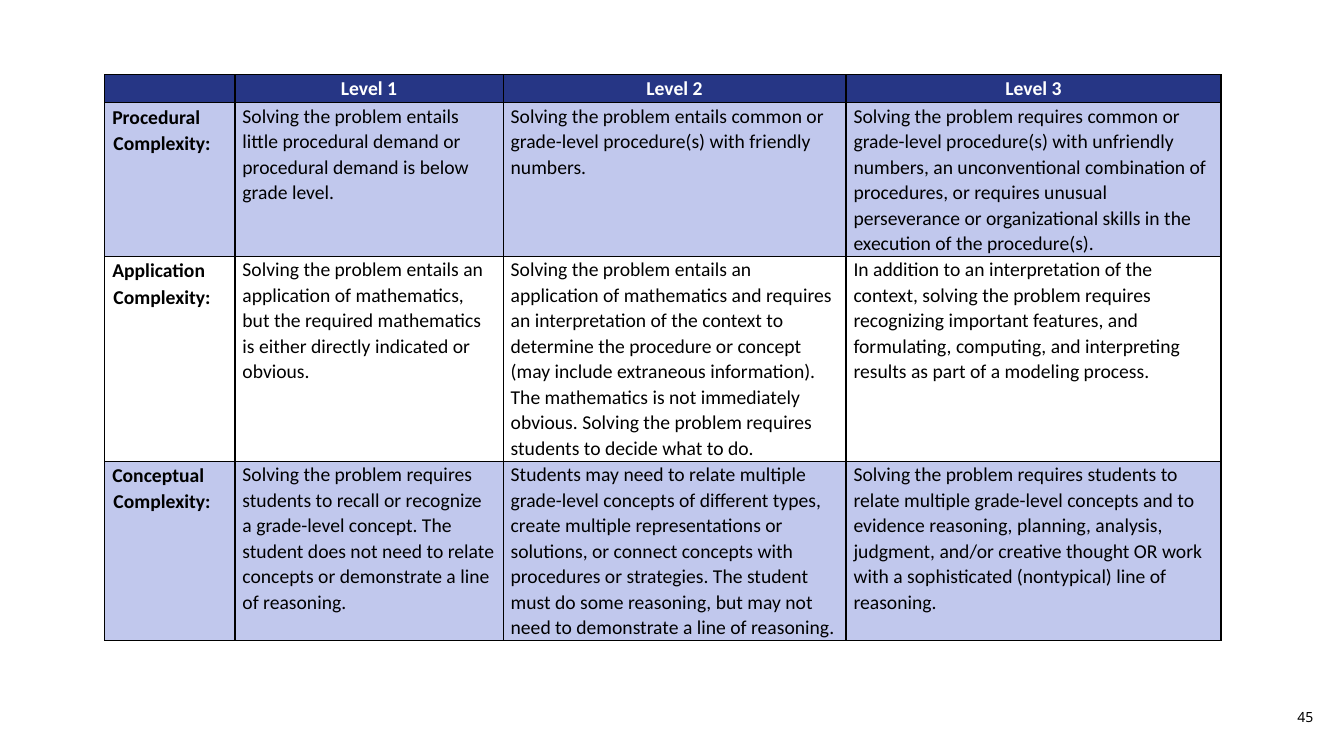
from lxml import etree
from pptx import Presentation
from pptx.dml.color import RGBColor
from pptx.enum.text import MSO_ANCHOR, PP_ALIGN
from pptx.oxml.ns import qn
from pptx.util import Cm, Pt

LEFT, CENTER, RIGHT = PP_ALIGN.LEFT, PP_ALIGN.CENTER, PP_ALIGN.RIGHT
MIDDLE = MSO_ANCHOR.MIDDLE

COLORS = {"header": "263685", "band": "C1C8ED", "white": "FFFFFF", "black": "000000"}
COL_WIDTHS = [3.28, 6.76, 8.64, 9.45]
ROW_HEIGHTS = [0.66, 3.87, 5.16, 4.51]
HANGING = Cm(0.03)

ROWS = [
    ["", "Level 1", "Level 2", "Level 3"],
    [
        "Procedural Complexity:",
        "Solving the problem entails little procedural demand or procedural demand is below grade level.",
        "Solving the problem entails common or grade-level procedure(s) with friendly numbers.",
        "Solving the problem requires common or grade-level procedure(s) with unfriendly numbers, "
        "an unconventional combination of procedures, or requires unusual perseverance or "
        "organizational skills in the execution of the procedure(s).",
    ],
    [
        "Application Complexity:",
        "Solving the problem entails an application of mathematics, but the required mathematics "
        "is either directly indicated or obvious.",
        "Solving the problem entails an application of mathematics and requires an interpretation "
        "of the context to determine the procedure or concept (may include extraneous information). "
        "The mathematics is not immediately obvious. Solving the problem requires students to "
        "decide what to do.",
        "In addition to an interpretation of the context, solving the problem requires recognizing "
        "important features, and formulating, computing, and interpreting results as part of a "
        "modeling process.",
    ],
    [
        "Conceptual Complexity:",
        "Solving the problem requires students to recall or recognize a grade-level concept. "
        "The student does not need to relate concepts or demonstrate a line of reasoning.",
        "Students may need to relate multiple grade-level concepts of different types, create "
        "multiple representations or solutions, or connect concepts with procedures or strategies. "
        "The student must do some reasoning, but may not need to demonstrate a line of reasoning.",
        "Solving the problem requires students to relate multiple grade-level concepts and to "
        "evidence reasoning, planning, analysis, judgment, and/or creative thought OR work with a "
        "sophisticated (nontypical) line of reasoning.",
    ],
]


def write(p, text, color, align, spacing, **font):
    p.alignment, p.line_spacing = align, spacing
    r = p.add_run()
    r.text = text
    for name, value in font.items():
        setattr(r.font, name, value)
    r.font.color.rgb = RGBColor.from_string(COLORS[color])


def add_borders(cell):
    tc_pr = cell._tc.get_or_add_tcPr()
    for i, side in enumerate(["lnL", "lnR", "lnT", "lnB"]):
        ln = etree.Element(qn(f"a:{side}"), w=str(Pt(1)))
        fill = etree.SubElement(ln, qn("a:solidFill"))
        etree.SubElement(fill, qn("a:srgbClr"), val=COLORS["black"])
        tc_pr.insert(i, ln)


prs = Presentation()
prs.slide_width, prs.slide_height = Cm(33.87), Cm(19.05)
s = prs.slides.add_slide(prs.slide_layouts[6])

# Complexity table
frame = s.shapes.add_table(len(ROWS), len(COL_WIDTHS), Cm(2.64), Cm(1.88),
                           Cm(sum(COL_WIDTHS)), Cm(sum(ROW_HEIGHTS)))
table = frame.table
table.horz_banding = False
for column, width in zip(table.columns, COL_WIDTHS):
    column.width = Cm(width)
for row, height in zip(table.rows, ROW_HEIGHTS):
    row.height = Cm(height)

for i, texts in enumerate(ROWS):
    for j, text in enumerate(texts):
        cell = table.cell(i, j)
        cell.margin_left = cell.margin_right = Cm(0.19)
        cell.margin_top = cell.margin_bottom = 0
        if i == 2:
            cell.fill.background()
        else:
            cell.fill.solid()
            cell.fill.fore_color.rgb = RGBColor.from_string(COLORS["band" if i else "header"])
        add_borders(cell)
        heading = i == 0 or j == 0
        p = cell.text_frame.paragraphs[0]
        write(p, text, "black" if i else "white", LEFT if i else CENTER,
              1.11 if heading else 1.07, name="Calibri", size=Pt(14), bold=heading)
        if i and j == 0:
            p_pr = p._p.get_or_add_pPr()
            p_pr.set("marL", str(HANGING))
            p_pr.set("indent", str(-HANGING))

# Slide number
tf = s.shapes.add_textbox(Cm(27.94), Cm(17.73), Cm(5.41), Cm(0.69)).text_frame
tf.word_wrap = True
tf.vertical_anchor = MIDDLE
write(tf.paragraphs[0], "45", "black", RIGHT, 1.0, name="Noto Sans", size=Pt(10))

prs.save("out.pptx")
